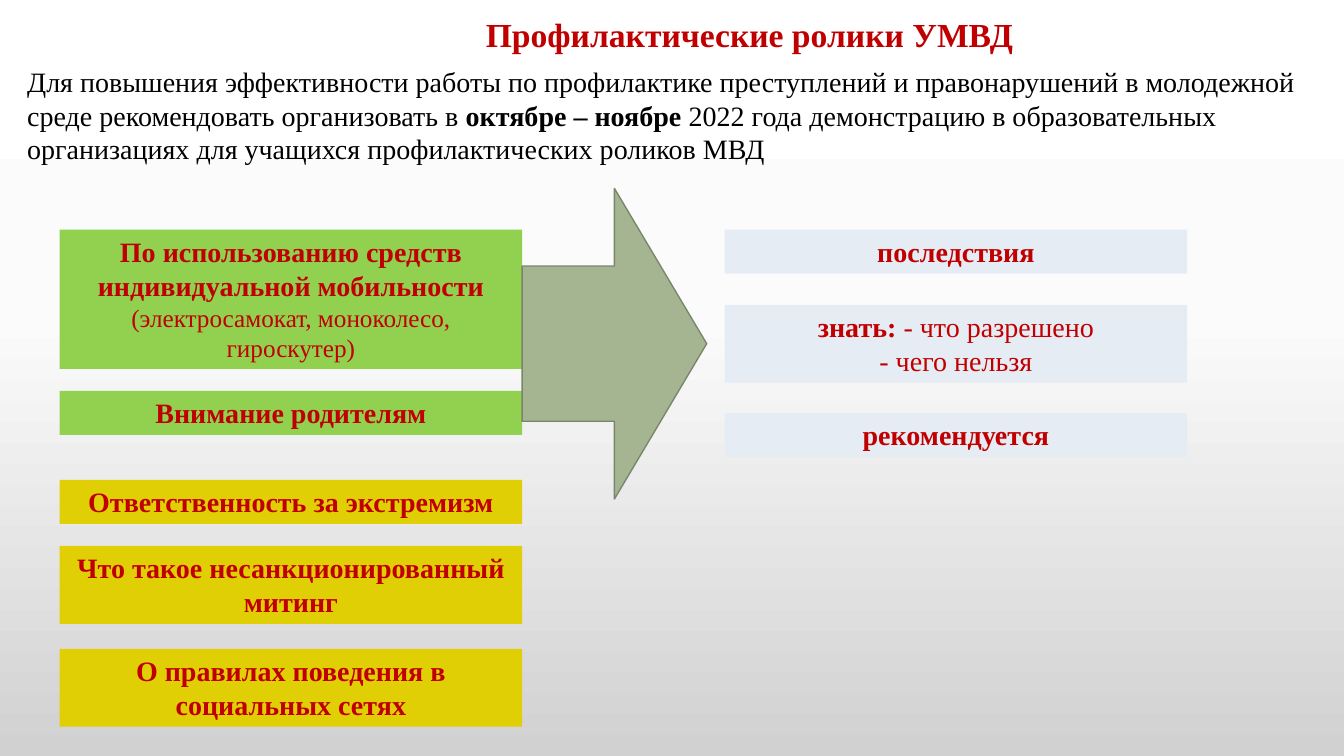
from copy import deepcopy

from pptx import Presentation
from pptx.dml.color import RGBColor
from pptx.enum import shapes, text
from pptx.oxml import ns
from pptx.util import Pt

COLORS = {
    "red": "C00000", "black": "000000", "green": "92D050", "yellow": "DFCF04",
    "pale": "E6ECF3", "arrow": "A5B592", "arrow_line": "7A866C",
}
BACKDROP = [(0, "FFFFFF"), (0.42, "FBFBFB"), (1, "D1D1D1")]


def write(frame, paragraphs, color="red", align=text.PP_ALIGN.CENTER,
          anchor=text.MSO_ANCHOR.TOP, first_indent=0):
    """Fill a frame with paragraphs, each a list of (text, size, bold) runs."""
    frame.word_wrap = True
    frame.auto_size = text.MSO_AUTO_SIZE.SHAPE_TO_FIT_TEXT
    frame.vertical_anchor = anchor
    for number, runs in enumerate(paragraphs):
        paragraph = frame.add_paragraph() if number else frame.paragraphs[0]
        paragraph.alignment = align
        paragraph.space_before = Pt(0)
        properties = paragraph._p.get_or_add_pPr()
        properties.set("marL", "0")
        properties.set("indent", str(Pt(first_indent)))
        properties.append(properties.makeelement(ns.qn("a:buNone"), {}))
        for words, size, bold in runs:
            run = paragraph.add_run()
            run.text = words
            run.font.name = "Times New Roman"
            run.font.size = Pt(size)
            run.font.bold = bold
            run.font.color.rgb = RGBColor.from_string(COLORS[color])


class Deck:
    """The current slide and its look."""

    def __init__(self):
        self.prs = Presentation()
        self.prs.slide_width, self.prs.slide_height = Pt(960), Pt(540)
        self.slide = self.prs.slides.add_slide(self.prs.slide_layouts[1])

    def backdrop(self, stops):
        fill = self.slide.background.fill
        fill.gradient()
        fill.gradient_angle = 270
        stop_list = self.slide._element.find(".//" + ns.qn("a:gsLst"))
        stop_list.append(deepcopy(stop_list[0]))
        for stop, (position, color) in zip(fill.gradient_stops, stops):
            stop.position = position
            stop.color.rgb = RGBColor.from_string(color)

    def placeholder(self, index, box, paragraphs, **style):
        holder = self.slide.placeholders[index]
        holder.left, holder.top, holder.width, holder.height = map(Pt, box)
        write(holder.text_frame, paragraphs, **style)

    def shape(self, kind, box, fill, line=None):
        shape = self.slide.shapes.add_shape(kind, *map(Pt, box))
        shape.shadow.inherit = False
        shape.fill.solid()
        shape.fill.fore_color.rgb = RGBColor.from_string(COLORS[fill])
        if line:
            shape.line.color.rgb = RGBColor.from_string(COLORS[line])
            shape.line.width = Pt(1)
        else:
            shape.line.fill.background()
        return shape

    def card(self, box, fill, paragraphs):
        card = self.shape(shapes.MSO_SHAPE.RECTANGLE, box, fill)
        write(card.text_frame, paragraphs)


def main():
    deck = Deck()
    deck.backdrop(BACKDROP)

    # Heading and introduction
    deck.placeholder(0, (89.3, 6.5, 856.8, 36),
                     [[("Профилактические ролики УМВД", 24, True)]], first_indent=35.3)
    deck.placeholder(1, (12.2, 42.5, 947.5, 79.9), [[
        ("Для повышения эффективности работы по профилактике преступлений и "
         "правонарушений в молодежной среде рекомендовать организовать в ", 20, False),
        ("октябре – ноябре ", 20, True),
        ("2022 года демонстрацию в образовательных организациях для учащихся "
         "профилактических роликов МВД", 20, False),
    ]], color="black", align=text.PP_ALIGN.LEFT)

    # Video topics on the left, their content on the right
    topics_left, content_left, card_width = 42.7, 517.7, 330.3
    one_line, two_lines = 31.5, 55.6
    cards = [
        (topics_left, 164, 99.4, "green", [
            [("По использованию средств индивидуальной мобильности", 20, True)],
            [("(электросамокат, моноколесо, гироскутер)", 18, False)]]),
        (topics_left, 279.2, one_line, "green", [[("Внимание родителям", 20, True)]]),
        (topics_left, 342.8, one_line, "yellow",
         [[("Ответственность за экстремизм", 20, True)]]),
        (topics_left, 390, two_lines, "yellow",
         [[("Что такое несанкционированный митинг", 20, True)]]),
        (topics_left, 463.5, two_lines, "yellow",
         [[("О правилах поведения в социальных сетях", 20, True)]]),
        (content_left, 164, one_line, "pale", [[("последствия", 20, True)]]),
        (content_left, 217.7, two_lines, "pale", [
            [("знать: ", 20, True), ("- что разрешено", 20, False)],
            [("- чего нельзя", 20, False)]]),
        (content_left, 295, one_line, "pale", [[("рекомендуется", 20, True)]]),
    ]
    for left, top, height, fill, paragraphs in cards:
        deck.card((left, top, card_width, height), fill, paragraphs)

    # Arrow from topics to content
    deck.shape(shapes.MSO_SHAPE.RIGHT_ARROW, (topics_left + card_width, 134.6, 131.8, 221.8),
               "arrow", line="arrow_line")

    deck.prs.save("out.pptx")


if __name__ == "__main__":
    main()
